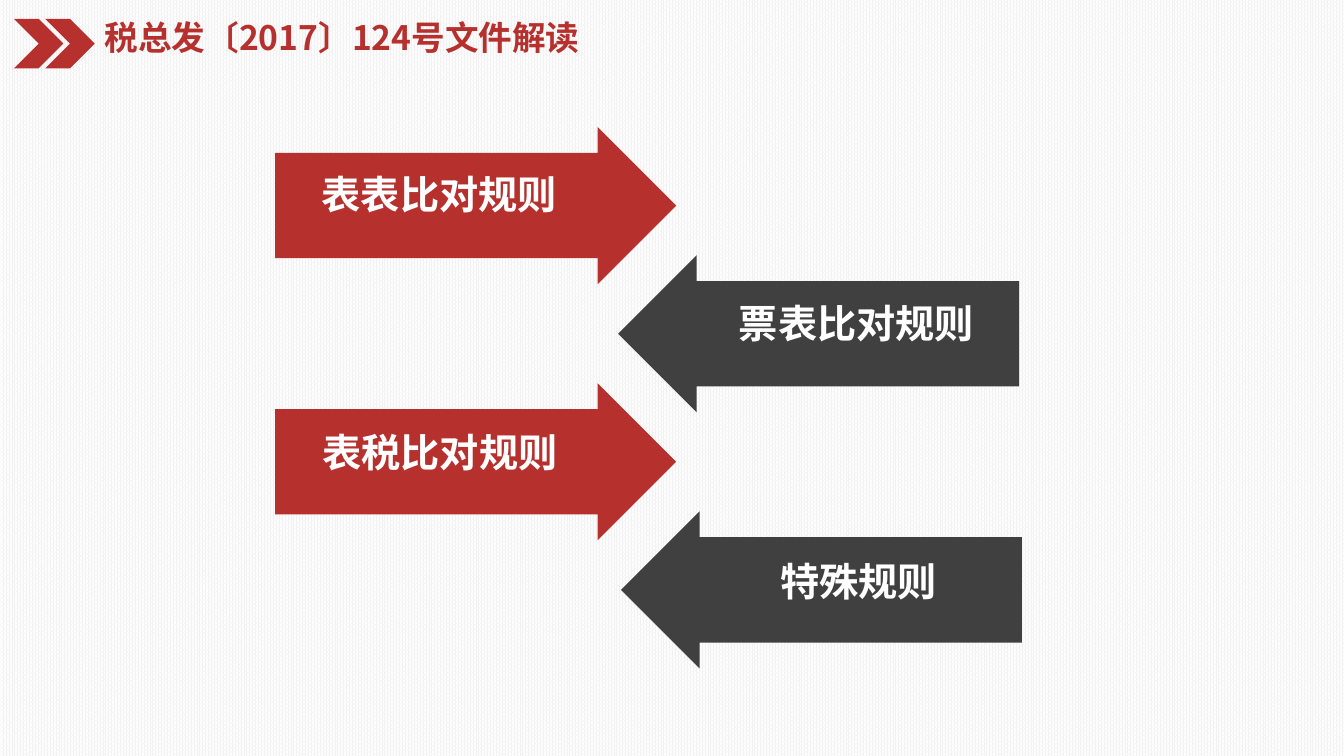
"""Build a slide of four opposing arrows that name the comparison rules."""
from lxml import etree
from pptx import Presentation
from pptx.dml.color import RGBColor
from pptx.enum.dml import MSO_PATTERN
from pptx.enum.shapes import MSO_SHAPE
from pptx.enum.text import MSO_AUTO_SIZE, PP_ALIGN
from pptx.oxml.ns import qn
from pptx.util import Pt

RED = RGBColor(0xB6, 0x30, 0x2E)
DARK = RGBColor(0x40, 0x40, 0x40)
PALE = RGBColor(0xF2, 0xF2, 0xF2)
WHITE = RGBColor(0xFF, 0xFF, 0xFF)
FONT = "Noto Sans CJK SC"
CHEVRON = MSO_SHAPE.CHEVRON
ARROW = MSO_SHAPE.RIGHT_ARROW
DOTS = MSO_PATTERN.PERCENT_80
GROW = MSO_AUTO_SIZE.SHAPE_TO_FIT_TEXT
LEFT = PP_ALIGN.LEFT
CENTER = PP_ALIGN.CENTER

RULES = [
    ("表表比对规则", 196.5, 220.5, 186.5),
    ("票表比对规则", 441.5, 513.5, 196.5),
    ("表税比对规则", 196.5, 221, 186.5),
    ("特殊规则", 443.5, 528, 170.5),
]


def add_shape(slide, kind, box, color):
    """Add a flat preset shape without an outline."""
    shape = slide.shapes.add_shape(kind, *map(Pt, box))
    shape.shadow.inherit = False
    shape.fill.solid()
    shape.fill.fore_color.rgb = color
    shape.line.fill.background()
    return shape


def add_arrow(slide, left, top, color, turn):
    """Add a block arrow turned by the given angle."""
    arrow = add_shape(slide, ARROW, (left, top, 286.5, 112.3), color)
    arrow.adjustments[0] = 0.67
    arrow.adjustments[1] = 0.5
    arrow.rotation = turn


def add_text(slide, text, box, size, color, align, inset):
    """Add a bold line of text with the given side and top insets."""
    frame = slide.shapes.add_textbox(*map(Pt, box)).text_frame
    frame.word_wrap = True
    frame.auto_size = GROW
    side, edge = map(Pt, inset)
    frame.margin_left = frame.margin_right = side
    frame.margin_top = frame.margin_bottom = edge
    para = frame.paragraphs[0]
    para.text = text
    para.alignment = align
    para.line_spacing = 0.88
    font = para.font
    font.size = Pt(size)
    font.bold = True
    font.color.rgb = color
    font.name = FONT
    props = para._p.pPr.find(qn("a:defRPr"))
    etree.SubElement(props, qn("a:ea")).set("typeface", FONT)


def add_head(slide):
    """Add the two chevrons and the title."""
    for left in (10, 32.4):
        add_shape(slide, CHEVRON, (left, 13.5, 35.3, 35.3), RED)
    add_text(slide, "税总发〔2017〕124号文件解读", (67.7, 12.2, 361.5, 36.7),
             24, RED, LEFT, (7.2, 3.6))


def add_rules(slide):
    """Add the arrows, pointing right and left by turns, and their labels."""
    for row, (_, left, _, _) in enumerate(RULES):
        odd = row % 2
        add_arrow(slide, left, 90.7 + 91.5 * row,
                  DARK if odd else RED, 180 * odd)
    for row, (text, _, left, width) in enumerate(RULES):
        add_text(slide, text, (left, 126 + 92.2 * row, width, 33.8),
                 28, WHITE, CENTER, (0, 0))


def main():
    """Build the slide and save it."""
    deck = Presentation()
    deck.slide_width, deck.slide_height = Pt(960), Pt(540)
    slide = deck.slides.add_slide(deck.slide_layouts[6])
    fill = slide.background.fill
    fill.patterned()
    fill.pattern = DOTS
    fill.fore_color.rgb = PALE
    fill.back_color.rgb = WHITE
    add_head(slide)
    add_rules(slide)
    deck.save("out.pptx")


if __name__ == "__main__":
    main()
